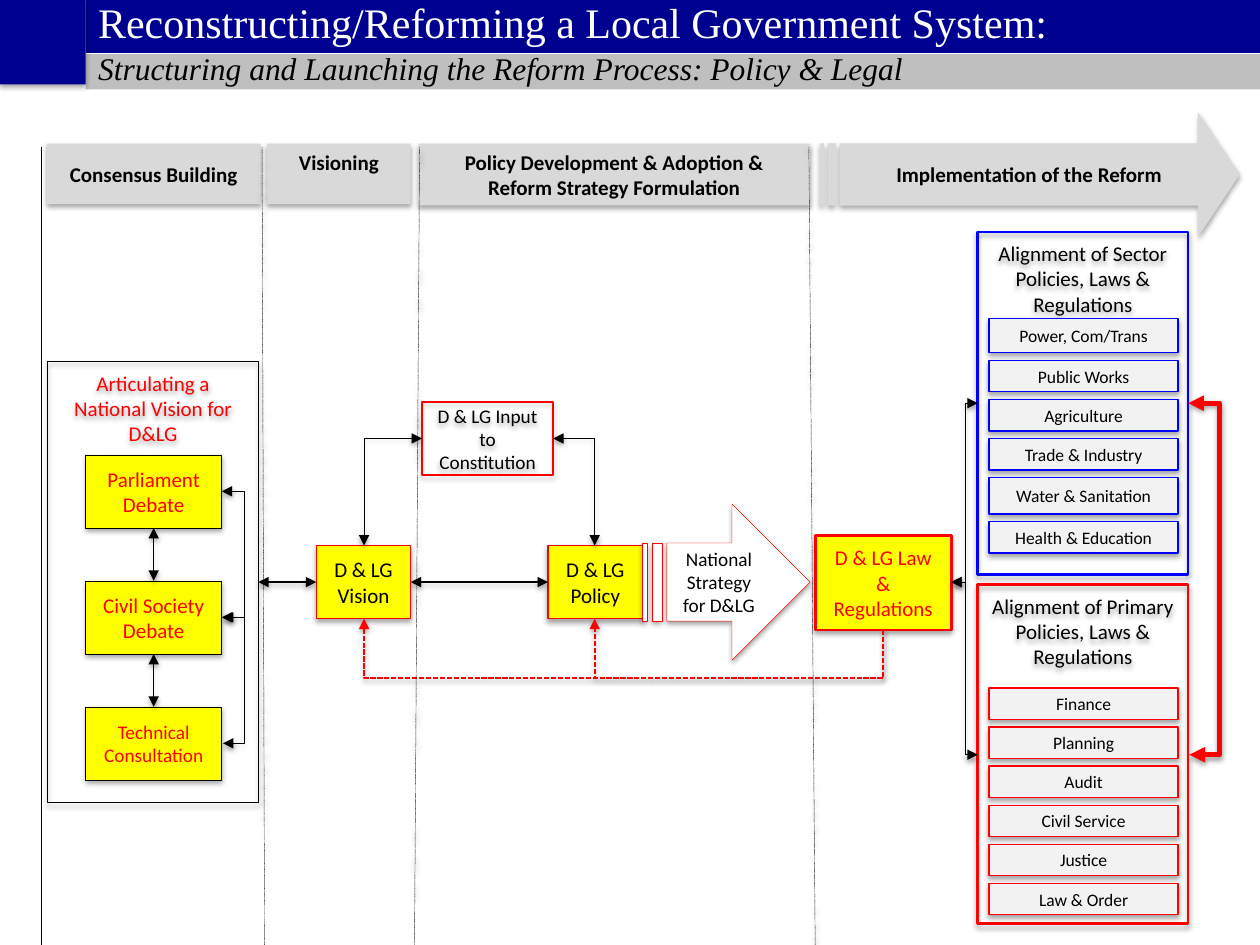
from lxml.etree import SubElement
from pptx import Presentation
from pptx.dml.color import RGBColor
from pptx.enum.dml import MSO_LINE
from pptx.enum.shapes import MSO_CONNECTOR, MSO_SHAPE
from pptx.enum.text import MSO_ANCHOR, PP_ALIGN
from pptx.oxml.ns import qn
from pptx.util import Inches, Pt

BLACK, WHITE, RED, BLUE = "000000", "FFFFFF", "FF0000", "0000FF"
NAVY, YELLOW, SILVER, PALE = "000090", "FFFF00", "D9D9D9", "F2F2F2"


def color(hex_value):
    return RGBColor.from_string(hex_value)


def add_shadow(effects, opacity, distance):
    shadow = SubElement(effects, qn("a:outerShdw"), {
        "blurRad": str(Pt(3.1)), "dist": str(Pt(distance)),
        "dir": "5400000", "rotWithShape": "0"})
    tint = SubElement(shadow, qn("a:srgbClr"), val=BLACK)
    SubElement(tint, qn("a:alpha"), val=str(opacity * 1000))


def write(shape, text, size, ink, font="Calibri", align=PP_ALIGN.CENTER,
          spacing=None, bold=False, italic=False, top_inset=None):
    frame = shape.text_frame
    frame.word_wrap = True
    frame.vertical_anchor = MSO_ANCHOR.MIDDLE
    if top_inset is not None:
        frame.vertical_anchor = MSO_ANCHOR.TOP
        frame.margin_top = Inches(top_inset)
    frame.text = text
    for paragraph in frame.paragraphs:
        paragraph.alignment = align
        if spacing:
            paragraph.line_spacing = spacing
        formats = {"name": font, "size": Pt(size), "bold": bold, "italic": italic}
        for name, value in formats.items():
            setattr(paragraph.font, name, value)
        paragraph.font.color.rgb = color(ink)


def add_block(slide, place, fill=None, border=None, weight=0.75,
              kind=MSO_SHAPE.RECTANGLE, shadowed=True):
    block = slide.shapes.add_shape(kind, *map(Inches, place))
    if fill:
        block.fill.solid()
        block.fill.fore_color.rgb = color(fill)
    else:
        block.fill.background()
    if border:
        block.line.color.rgb = color(border)
        block.line.width = Pt(weight)
    else:
        block.line.fill.background()
    block.shadow.inherit = False
    if shadowed:
        add_shadow(block._element.spPr.find(qn("a:effectLst")), 35, 1.8)
    return block


def add_link(slide, start, end, ink=BLACK, weight=0.25, dash=None,
             arrows=("headEnd", "tailEnd"), bend=None, corner=False, turned=False):
    (x1, y1), (x2, y2) = start, end
    ratio = None
    if bend is not None:
        ratio = (bend - y1) / (y2 - y1) if turned else (bend - x1) / (x2 - x1)
    if turned:
        cx, cy, dx, dy = (x1 + x2) / 2, (y1 + y2) / 2, (x2 - x1) / 2, (y2 - y1) / 2
        x1, y1, x2, y2 = cx - dy, cy + dx, cx + dy, cy - dx
    elbow = corner or bend is not None
    kind = MSO_CONNECTOR.ELBOW if elbow else MSO_CONNECTOR.STRAIGHT
    link = slide.shapes.add_connector(kind, *map(Inches, (x1, y1, x2, y2)))
    link.line.color.rgb = color(ink)
    link.line.width = Pt(weight)
    if dash:
        link.line.dash_style = dash
    properties = link._element.spPr
    geometry = properties.find(qn("a:prstGeom"))
    if turned:
        properties.find(qn("a:xfrm")).set("rot", "5400000")
    if corner:
        geometry.set("prst", "bentConnector2")
    if ratio is not None:
        SubElement(geometry.find(qn("a:avLst")), qn("a:gd"),
                   name="adj1", fmla=f"val {round(ratio * 100000)}")
    for arrow in arrows:
        SubElement(properties.find(qn("a:ln")), qn(f"a:{arrow}"), type="triangle")
    add_shadow(SubElement(properties, qn("a:effectLst")), 38, 1.6)


def add_titles(slide):
    titles = [
        ("Reconstructing/Reforming a Local Government System:", 0, 0.42, NAVY, 24, WHITE, False),
        ("Structuring and Launching the Reform Process: Policy & Legal",
         0.43, 0.28, "BFBFBF", 18, BLACK, True),
    ]
    for text, top, height, fill, size, ink, italic in titles:
        band = add_block(slide, (0.68, top, 9.32, height), fill, shadowed=False)
        write(band, text, size, ink, font="Times New Roman",
              align=PP_ALIGN.LEFT, spacing=0.8, italic=italic)
    add_block(slide, (0, 0, 0.68, 0.67), NAVY)


def add_phases(slide):
    phases = [
        ("Consensus Building", 0.37, 1.7, 0.48, None),
        ("Visioning", 2.12, 1.14, 0.48, 0.05),
        ("Policy Development & Adoption & Reform Strategy Formulation", 3.32, 3.11, 0.49, None),
    ]
    for text, left, width, height, top_inset in phases:
        header = add_block(slide, (left, 1.14, width, height), SILVER)
        write(header, text, 12, BLACK, bold=True, top_inset=top_inset)
    for top_x, bottom_x in [(0.33, 0.33), (2.08, 2.1), (3.33, 3.29), (6.42, 6.47)]:
        add_link(slide, (top_x, 1.17), (bottom_x, 7.5), dash=MSO_LINE.ROUND_DOT, arrows=())
    implementation = add_block(slide, (6.51, 0.89, 3.33, 0.99), SILVER,
                               kind=MSO_SHAPE.STRIPED_RIGHT_ARROW)
    implementation.adjustments[1] = 0.335
    write(implementation, "Implementation of the Reform", 12, BLACK, bold=True)


def add_panel(slide, title, place, border, ink, weight):
    panel = add_block(slide, place, border=border, weight=weight)
    write(panel, title, 12, ink, top_inset=0.07)


def add_stack(slide, top, border, entries):
    for label, height in entries:
        entry = add_block(slide, (7.85, top, 1.5, height), PALE, border)
        write(entry, label, 10, BLACK)
        top += height + 0.06


def add_steps(slide):
    debates = [("Parliament Debate", 12), ("Civil Society\nDebate", 12),
               ("Technical Consultation", 11)]
    for index, (text, size) in enumerate(debates):
        debate = add_block(slide, (0.68, 3.61 + index, 1.08, 0.58), YELLOW, BLACK, 0.25)
        write(debate, text, size, RED)
    steps = [
        ("D & LG Vision", (2.51, 4.33, 0.75, 0.58), YELLOW, 0.75, 12, BLACK),
        ("D & LG Policy", (4.35, 4.33, 0.75, 0.58), YELLOW, 1, 12, BLACK),
        ("D & LG Law & Regulations", (6.47, 4.25, 1.08, 0.75), YELLOW, 1.5, 12, RED),
        ("D & LG Input to Constitution", (3.35, 3.19, 1.04, 0.58), None, 0.75, 11, BLACK),
    ]
    for text, place, fill, weight, size, ink in steps:
        write(add_block(slide, place, fill, RED, weight), text, size, ink)
    strategy = add_block(slide, (5.1, 4, 1.33, 1.24), WHITE, RED, 0.25,
                         kind=MSO_SHAPE.STRIPED_RIGHT_ARROW)
    write(strategy, "National Strategy for D&LG", 11, BLACK)


def add_links(slide):
    for top in (3.9, 4.9):
        add_link(slide, (1.76, top), (1.77, top + 1), bend=1.94)
        add_link(slide, (1.22, top + 0.29), (1.22, top + 0.71))
    add_link(slide, (2.05, 4.62), (2.51, 4.62), weight=1)
    add_link(slide, (3.26, 4.62), (4.35, 4.62), weight=0.75)
    add_link(slide, (2.89, 4.33), (3.35, 3.48), corner=True, turned=True)
    add_link(slide, (4.39, 3.48), (4.72, 4.33), corner=True)
    for sector_y in (3.2, 5.99):
        add_link(slide, (7.55, 4.62), (7.76, sector_y), weight=0.5, bend=7.66)
    for feedback_x in (2.89, 4.72):
        add_link(slide, (7.01, 5), (feedback_x, 4.91), RED, 1, MSO_LINE.SQUARE_DOT,
                 arrows=("tailEnd",), bend=5.38, turned=True)
    add_link(slide, (9.43, 3.2), (9.44, 5.99), RED, 3, bend=9.68)


def main():
    deck = Presentation()
    deck.slide_width, deck.slide_height = Inches(10), Inches(7.5)
    slide = deck.slides.add_slide(deck.slide_layouts[6])
    add_titles(slide)
    add_panel(slide, "Articulating a National Vision for D&LG",
              (0.38, 2.87, 1.67, 3.5), BLACK, RED, 0.75)
    add_panel(slide, "Alignment of Sector Policies, Laws & Regulations",
              (7.76, 1.84, 1.67, 2.72), BLUE, BLACK, 1.5)
    add_panel(slide, "Alignment of Primary Policies, Laws & Regulations",
              (7.76, 4.64, 1.67, 2.69), RED, BLACK, 1.5)
    add_steps(slide)
    add_stack(slide, 2.53, BLUE, [
        ("Power, Com/Trans", 0.27), ("Public Works", 0.25), ("Agriculture", 0.25),
        ("Trade & Industry", 0.25), ("Water & Sanitation", 0.29), ("Health & Education", 0.25)])
    primary = ["Finance", "Planning", "Audit", "Civil Service", "Justice", "Law & Order"]
    add_stack(slide, 5.46, RED, [(label, 0.25) for label in primary])
    add_links(slide)
    add_phases(slide)
    deck.save("out.pptx")


if __name__ == "__main__":
    main()
